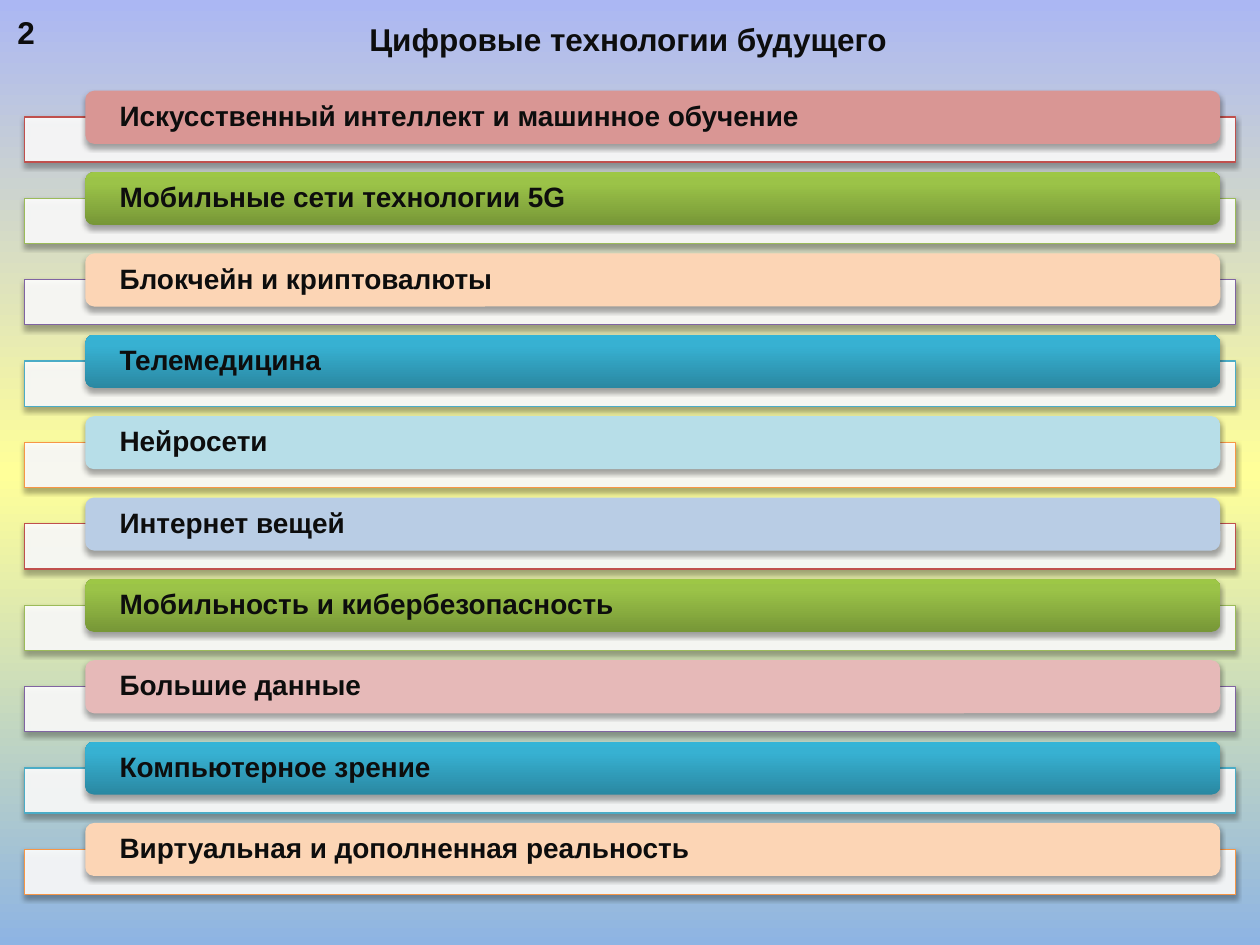
from copy import deepcopy

from lxml.etree import SubElement
from pptx import Presentation
from pptx.dml.color import RGBColor
from pptx.enum.shapes import MSO_SHAPE as Preset
from pptx.enum.text import MSO_ANCHOR as Anchor, PP_ALIGN as Align
from pptx.oxml.ns import qn
from pptx.util import Cm, Pt


class Theme:
    font = "Arial"
    ink = "0D0D0D"
    white = "FFFFFF"
    shadow = "000000"
    heading_size = Pt(18)
    bar_size = Pt(16)
    outline_width = Pt(0.75)
    sky = [(0, "8EB4E3"), (0.5, "FFFF99"), (1, "ABB7F3")]
    green = [(0, "779737"), (0.8, "9BC348"), (1, "9DC746")]
    teal = [(0, "2A88A2"), (0.8, "37B1D2"), (1, "34B4D6")]
    rose, peach, pink = "D99694", "FCD5B5", "E6B9B8"
    pale_teal, pale_blue = "B7DEE8", "B9CDE5"
    outlines = ["C0504D", "9BBB59", "8064A2", "4BACC6", "F79646"]


TOPICS = [
    ("Искусственный интеллект и машинное обучение", Theme.rose),
    ("Мобильные сети технологии 5G", Theme.green),
    ("Блокчейн и криптовалюты", Theme.peach),
    ("Телемедицина", Theme.teal),
    ("Нейросети", Theme.pale_teal),
    ("Интернет вещей", Theme.pale_blue),
    ("Мобильность и кибербезопасность", Theme.green),
    ("Большие данные", Theme.pink),
    ("Компьютерное зрение", Theme.teal),
    ("Виртуальная и дополненная реальность", Theme.peach),
]
FIRST_TOP = 1.83
ROW_STEP = 1.64
TRAY_DROP = 0.53


class SlideBuilder:
    def __init__(self, page, theme):
        self.page = page
        self.theme = theme

    def paint(self, fill, element, colour):
        """Fill with one colour, or with a bottom-to-top list of stops."""
        if isinstance(colour, str):
            fill.solid()
            fill.fore_color.rgb = RGBColor.from_string(colour)
            return
        fill.gradient()
        fill.gradient_angle = 90
        stop_list = next(element.iter(qn("a:gsLst")))
        while len(stop_list) < len(colour):
            stop_list.append(deepcopy(stop_list[0]))
        for stop, (position, value) in zip(fill.gradient_stops, colour):
            stop.position = position
            stop.color.rgb = RGBColor.from_string(value)

    def background(self, colour):
        self.paint(self.page.background.fill, self.page.element, colour)

    def set_text(self, shape, text, size):
        frame = shape.text_frame
        frame.word_wrap = True
        frame.text = text
        para = frame.paragraphs[0]
        font = para.runs[0].font
        font.name, font.size, font.bold = self.theme.font, size, True
        font.color.rgb = RGBColor.from_string(self.theme.ink)
        return para

    def label(self, text, left, top, width, height, align=Align.LEFT):
        box = self.page.shapes.add_textbox(
            Cm(left), Cm(top), Cm(width), Cm(height))
        self.set_text(box, text, self.theme.heading_size).alignment = align

    def block(self, preset, left, top, width, height, colour):
        """Add a filled shape without outline, with a soft shadow below."""
        shape = self.page.shapes.add_shape(
            preset, Cm(left), Cm(top), Cm(width), Cm(height))
        self.paint(shape.fill, shape.element, colour)
        shape.line.fill.background()
        shape.shadow.inherit = False
        effects = next(shape.element.iter(qn("a:effectLst")))
        shadow = SubElement(effects, qn("a:outerShdw"), blurRad="40000",
                            dist="23000", dir="5400000", rotWithShape="0")
        tint = SubElement(shadow, qn("a:srgbClr"), val=self.theme.shadow)
        SubElement(tint, qn("a:alpha"), val="35000")
        return shape

    def tray(self, top, outline):
        """Add the translucent outlined strip behind a topic bar."""
        tray = self.block(Preset.RECTANGLE, 0.5, top, 24.41, 0.91,
                          self.theme.white)
        tint = next(tray.element.spPr.iter(qn("a:srgbClr")))
        SubElement(tint, qn("a:alpha"), val="90000")
        tray.line.color.rgb = RGBColor.from_string(outline)
        tray.line.width = self.theme.outline_width

    def bar(self, text, top, colour):
        bar = self.block(Preset.ROUNDED_RECTANGLE, 1.72, top, 22.88, 1.07,
                         colour)
        frame = bar.text_frame
        frame.margin_left = frame.margin_right = Cm(0.64)
        frame.margin_top = frame.margin_bottom = 0
        frame.vertical_anchor = Anchor.MIDDLE
        para = self.set_text(bar, text, self.theme.bar_size)
        para.alignment = Align.LEFT
        para.line_spacing = 0.9


def main():
    deck = Presentation()
    deck.slide_width, deck.slide_height = Cm(25.4), Cm(19.05)
    theme = Theme()
    builder = SlideBuilder(deck.slides.add_slide(deck.slide_layouts[6]), theme)
    builder.background(theme.sky)
    builder.label("Цифровые технологии будущего ",
                  1, 0.28, 23.5, 17, Align.CENTER)
    for row, (topic, colour) in enumerate(TOPICS):
        top = FIRST_TOP + row * ROW_STEP
        builder.tray(top + TRAY_DROP, theme.outlines[row % len(theme.outlines)])
        builder.bar(topic, top, colour)
    builder.label("2", 0.1, 0.13, 1.4, 1.02)
    deck.save("out.pptx")


if __name__ == "__main__":
    main()
